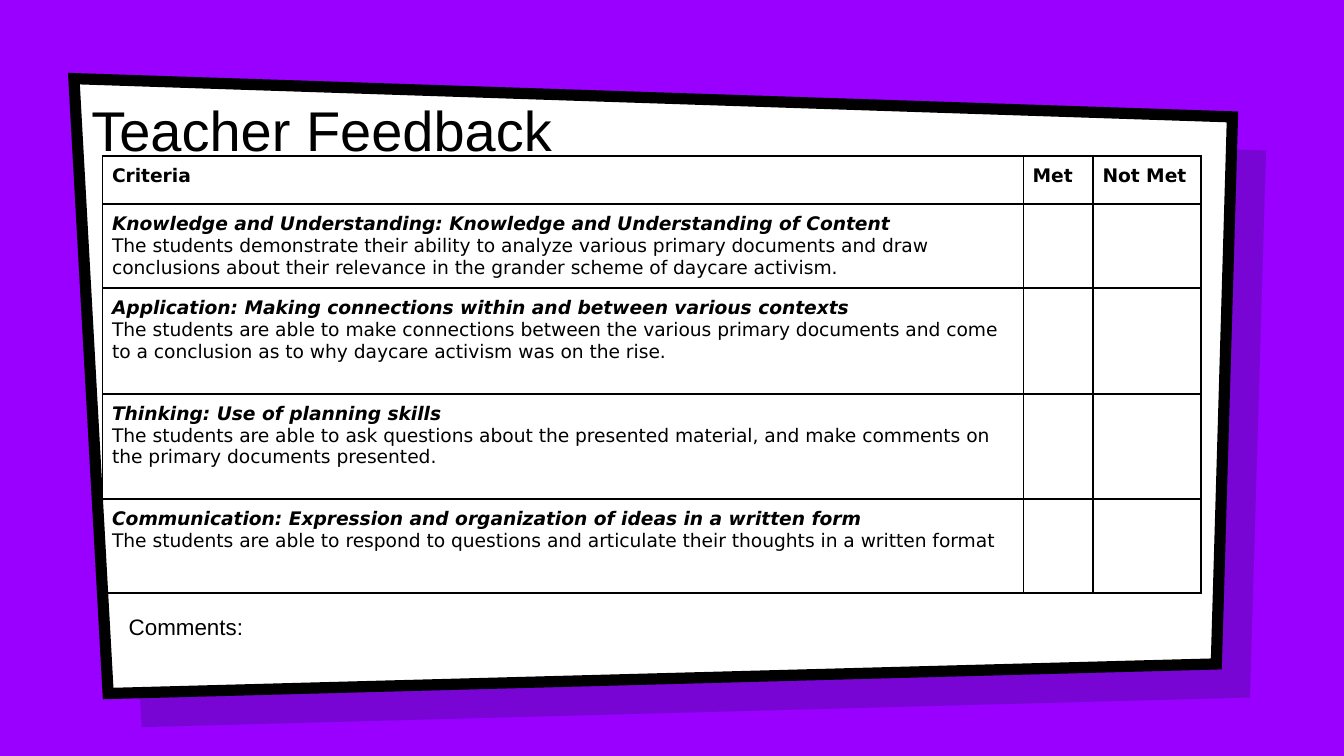
from lxml import etree
from pptx import Presentation
from pptx.dml.color import RGBColor
from pptx.enum.text import MSO_ANCHOR, MSO_AUTO_SIZE, PP_ALIGN
from pptx.oxml.ns import qn
from pptx.util import Inches, Pt

LEFT = PP_ALIGN.LEFT
BOTTOM, TOP = MSO_ANCHOR.BOTTOM, MSO_ANCHOR.TOP
NO_AUTOFIT = MSO_AUTO_SIZE.NONE
TITLE_ONLY = 5

COLUMNS, ROWS = 100, 56.25
PANEL = [(5.5, 5.85), (91.7, 8.7), (90.5, 49.4), (8.05, 51.6)]
SHADOW_SHIFT = 2.5

COLUMN_WIDTHS = [68.5, 5.2, 8]
ROW_HEIGHTS = [3.6, 6.25, 7.85, 7.85, 7]
HEADINGS = ["Criteria", "Met", "Not Met"]
CRITERIA = [
    ("Knowledge and Understanding: Knowledge and Understanding of Content",
     "The students demonstrate their ability to analyze various primary documents and draw "
     "conclusions about their relevance in the grander scheme of daycare activism."),
    ("Application: Making connections within and between various contexts",
     "The students are able to make connections between the various primary documents and come "
     "to a conclusion as to why daycare activism was on the rise."),
    ("Thinking: Use of planning skills",
     "The students are able to ask questions about the presented material, and make comments on "
     "the primary documents presented."),
    ("Communication: Expression and organization of ideas in a written form",
     "The students are able to respond to questions and articulate their thoughts in a written format"),
]


def colour(value):
    return RGBColor.from_string(value)


def grid(units):
    """Length of a number of square grid units, a tenth of an inch each."""
    return Inches(units / 10)


class FeedbackSlide:
    ink = "000000"
    paper = "FFFFFF"
    heading_font = "Arial"
    table_font = "DejaVu Sans"

    def __init__(self, deck, background):
        self.slide = deck.slides.add_slide(deck.slide_layouts[TITLE_ONLY])
        self.slide.background.fill.solid()
        self.slide.background.fill.fore_color.rgb = colour(background)

    def style(self, para, font, size, bold=False, italic=False):
        para.alignment = LEFT
        for span in para.runs:
            span.font.name, span.font.size = font, Pt(size)
            span.font.bold, span.font.italic = bold, italic
            span.font.color.rgb = colour(self.ink)

    def panel(self, points, fill, opacity=100, line_width=None):
        corners = [(grid(x), grid(y)) for x, y in points]
        builder = self.slide.shapes.build_freeform(*corners[0], scale=1.0)
        builder.add_line_segments(corners[1:], close=True)
        shape = builder.convert_to_shape()
        shape.shadow.inherit = False
        shape.fill.solid()
        shape.fill.fore_color.rgb = colour(fill)
        if opacity < 100:
            tint = shape.fill._xPr.find(".//" + qn("a:srgbClr"))
            etree.SubElement(tint, qn("a:alpha"), val=str(opacity * 1000))
        if line_width:
            shape.line.color.rgb = colour(self.ink)
            shape.line.width = Pt(line_width)
            etree.SubElement(shape.line._ln, qn("a:miter"), lim="800000")
        else:
            shape.line.fill.background()

    def fill_frame(self, frame, text, size, anchor):
        frame.word_wrap = True
        frame.auto_size = NO_AUTOFIT
        frame.vertical_anchor = anchor
        frame.margin_left = frame.margin_right = grid(1)
        frame.margin_top = frame.margin_bottom = grid(1)
        frame.text = text
        self.style(frame.paragraphs[0], self.heading_font, size)

    def title(self, text, left, top, width, height):
        title = self.slide.shapes.title
        title.left, title.top = grid(left), grid(top)
        title.width, title.height = grid(width), grid(height)
        self.fill_frame(title.text_frame, text, 30, BOTTOM)

    def note(self, text, left, top, width, height):
        box = self.slide.shapes.add_textbox(grid(left), grid(top), grid(width), grid(height))
        self.fill_frame(box.text_frame, text, 12, TOP)
        para = box.text_frame.paragraphs[0]
        para.line_spacing = 1.15
        para._p.get_or_add_pPr().set("marL", str(grid(5)))

    def border(self, cell):
        properties = cell._tc.get_or_add_tcPr()
        for position, side in enumerate(("lnL", "lnR", "lnT", "lnB")):
            line = etree.Element(qn("a:" + side), w=str(Pt(1)))
            fill = etree.SubElement(line, qn("a:solidFill"))
            etree.SubElement(fill, qn("a:srgbClr"), val=self.ink)
            properties.insert(position, line)

    def table(self, left, top, widths, heights, headings, criteria):
        frame = self.slide.shapes.add_table(len(heights), len(widths), grid(left), grid(top),
                                            grid(sum(widths)), grid(sum(heights)))
        table = frame.table
        table.first_row = table.horz_banding = False
        for column, width in zip(table.columns, widths):
            column.width = grid(width)
        for row, height in zip(table.rows, heights):
            row.height = grid(height)
        for cell in table.iter_cells():
            cell.fill.background()
            cell.margin_left = cell.margin_right = grid(0.7)
            cell.margin_top = cell.margin_bottom = grid(0.7)
            self.border(cell)
        for index, heading in enumerate(headings):
            cell = table.cell(0, index)
            cell.text = heading
            self.style(cell.text_frame.paragraphs[0], self.table_font, 10, bold=True)
        for index, lines in enumerate(criteria, start=1):
            cell = table.cell(index, 0)
            cell.text = "\n".join(lines)
            name, detail = cell.text_frame.paragraphs
            self.style(name, self.table_font, 10, bold=True, italic=True)
            self.style(detail, self.table_font, 10)


def main():
    deck = Presentation()
    deck.slide_width, deck.slide_height = grid(COLUMNS), grid(ROWS)
    page = FeedbackSlide(deck, background="9900FF")
    shadow = [(x + SHADOW_SHIFT, y + SHADOW_SHIFT) for x, y in PANEL]
    page.panel(shadow, "001936", opacity=21)
    page.panel(PANEL, page.paper, line_width=6)
    page.title("Teacher Feedback", 5.8, 4.8, 45.7, 8.3)
    page.table(7.64, 11.6, COLUMN_WIDTHS, ROW_HEIGHTS, HEADINGS, CRITERIA)
    page.note("Comments:", 3.6, 44.35, 83.4, 5)

    # The title placeholder comes first by default: lift it above the panels.
    shapes = page.slide.shapes
    shapes[2]._element.addnext(shapes.title._element)
    deck.save("out.pptx")


if __name__ == "__main__":
    main()
